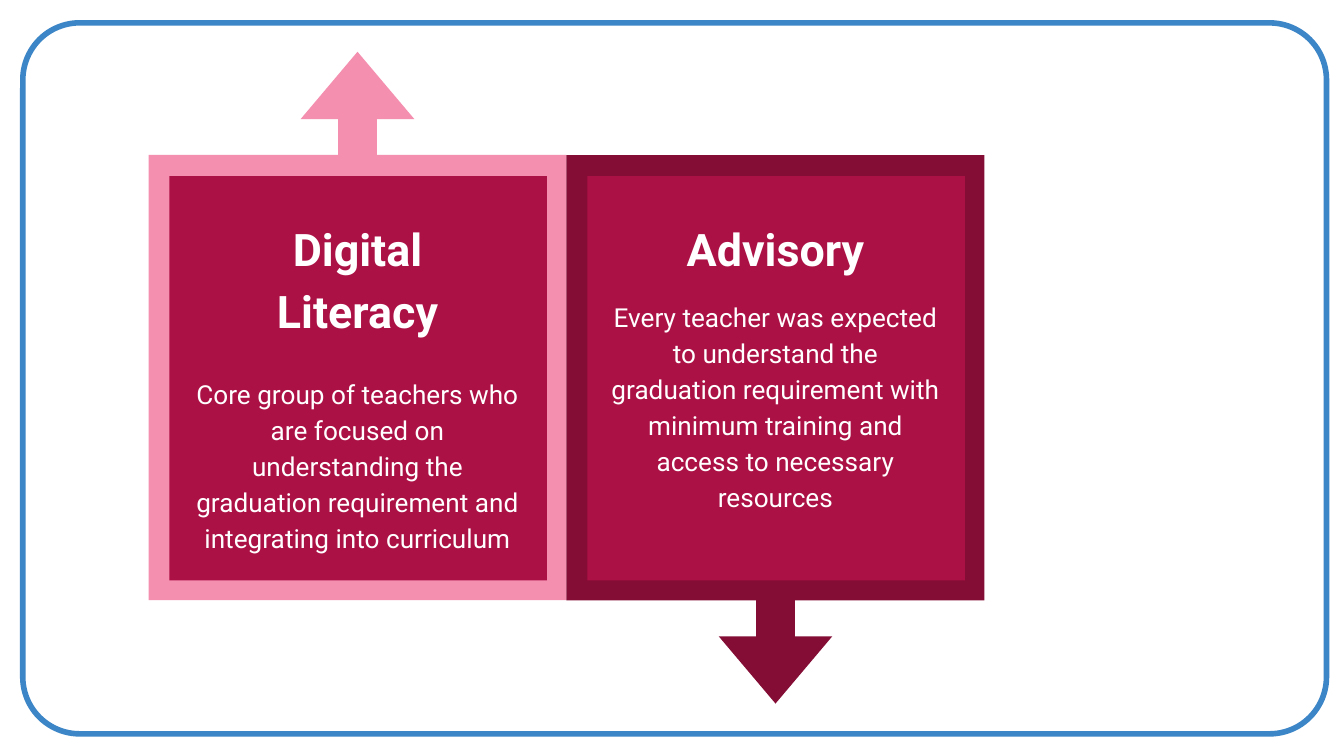
from pptx import Presentation
from pptx.dml.color import RGBColor
from pptx.enum.shapes import MSO_SHAPE
from pptx.enum.text import PP_ALIGN
from pptx.util import Inches, Pt

BLUE = RGBColor(0x3C, 0x85, 0xC6)
PINK = RGBColor(0xF4, 0x8F, 0xB0)
WINE = RGBColor(0x84, 0x0D, 0x35)
RED = RGBColor(0xAC, 0x11, 0x45)
WHITE = RGBColor(0xFF, 0xFF, 0xFF)

MID = 2.66  # centre of the first panel
STEP = 3.11  # width of a panel
LONG = 4.08  # panel height with its arrow
ARROW = (0.093, 0.136, 0.161, 0.812)

# frame colour, turn, top, headings, gap in points, body, text width
PANELS = [
    (PINK, 270, 0.87, ["Digital", "Literacy"], 19.5,
     "Core group of teachers who are focused on understanding the "
     "graduation requirement and integrating into curriculum", 2.71),
    (WINE, 90, 1.64, ["Advisory"], 11.3,
     "Every teacher was expected to understand the graduation requirement "
     "with minimum training and access to necessary resources", 2.67),
]


def add_shape(slide, kind, box, fill=None, line=None, adj=(), turn=0):
    shape = slide.shapes.add_shape(kind, *map(Inches, box))
    shape.shadow.inherit = False
    shape.rotation = turn
    for i, value in enumerate(adj):
        shape.adjustments[i] = value
    if fill is None:
        shape.fill.background()
    else:
        shape.fill.solid()
        shape.fill.fore_color.rgb = fill
    if line is None:
        shape.line.fill.background()
    else:
        shape.line.color.rgb = line
        shape.line.width = Pt(3)


def add_text(para, text, size=14, bold=False, before=0):
    para.alignment = PP_ALIGN.CENTER
    para.line_spacing = 1.15
    para.space_before = Pt(before)
    run = para.add_run()
    run.text = text
    font = run.font
    font.name = "Roboto"
    font.size = Pt(size)
    font.bold = bold
    font.color.rgb = WHITE


def add_panel(slide, mid, color, turn, top, heads, gap, body, width):
    """Draw a framed card with an arrow, a heading and a body text."""
    add_shape(slide, MSO_SHAPE.RIGHT_ARROW_CALLOUT,
              (mid - LONG / 2, top, LONG, STEP), color, adj=ARROW, turn=turn)
    add_shape(slide, MSO_SHAPE.RECTANGLE, (mid - 1.4, 1.31, 2.81, 3.01), RED)
    box = slide.shapes.add_textbox(Inches(mid - width / 2), Inches(1.49),
                                   Inches(width), Inches(2.51))
    frame = box.text_frame
    frame.word_wrap = True
    frame.margin_left = frame.margin_right = Inches(0.1)
    frame.margin_top = frame.margin_bottom = Inches(0.1)
    para = frame.paragraphs[0]
    for head in heads:
        add_text(para, head, size=24, bold=True)
        para = frame.add_paragraph()
    add_text(para, body, before=gap)


def main():
    deck = Presentation()
    deck.slide_width = Inches(10)
    deck.slide_height = Inches(10) * 9 // 16
    slide = deck.slides.add_slide(deck.slide_layouts[6])
    add_shape(slide, MSO_SHAPE.ROUNDED_RECTANGLE, (0.17, 0.17, 9.7, 5.29),
              line=BLUE, adj=[0.08])
    for i, panel in enumerate(PANELS):
        add_panel(slide, MID + i * STEP, *panel)
    deck.save("out.pptx")


if __name__ == "__main__":
    main()
